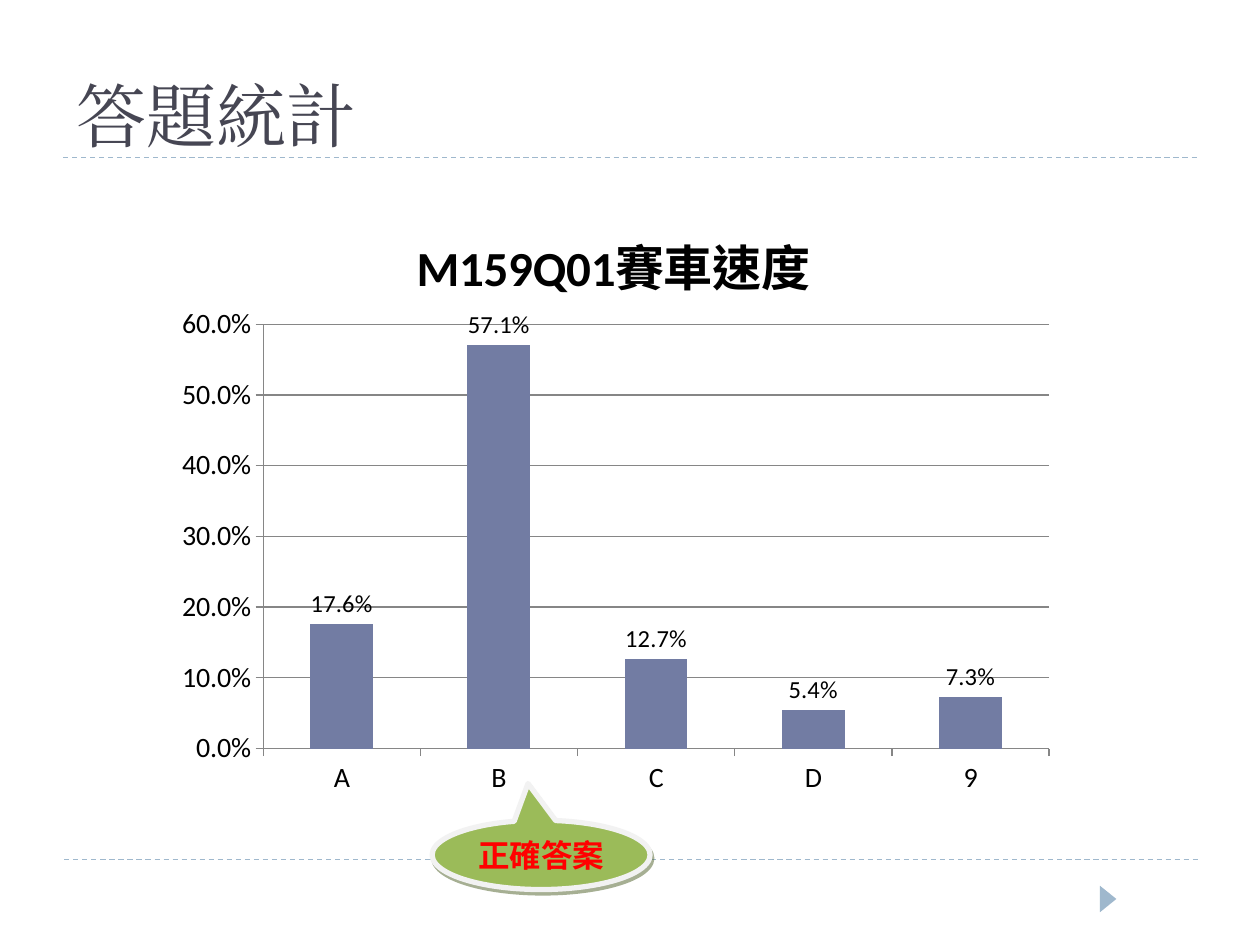
from dataclasses import dataclass

from lxml import etree
from pptx import Presentation
from pptx.chart.data import CategoryChartData
from pptx.dml.color import RGBColor
from pptx.enum.chart import XL_CHART_TYPE, XL_LABEL_POSITION, XL_TICK_MARK
from pptx.enum.dml import MSO_LINE
from pptx.enum.shapes import MSO_CONNECTOR, MSO_SHAPE
from pptx.enum.text import MSO_ANCHOR, PP_ALIGN
from pptx.oxml import parse_xml
from pptx.oxml.ns import nsdecls, qn
from pptx.util import Inches, Pt

COLUMN = XL_CHART_TYPE.COLUMN_CLUSTERED
LABEL_ABOVE = XL_LABEL_POSITION.OUTSIDE_END
TICK_OUT = XL_TICK_MARK.OUTSIDE
DASH = MSO_LINE.DASH
STRAIGHT = MSO_CONNECTOR.STRAIGHT
TRIANGLE = MSO_SHAPE.ISOSCELES_TRIANGLE
CALLOUT = MSO_SHAPE.OVAL_CALLOUT
BOTTOM, MIDDLE = MSO_ANCHOR.BOTTOM, MSO_ANCHOR.MIDDLE
LEFT, CENTER = PP_ALIGN.LEFT, PP_ALIGN.CENTER

COLORS = {
    "rule": "9FB8CD",
    "title": "464653",
    "bar": "727CA3",
    "axis": "868686",
    "text": "000000",
    "callout": "9BBB59",
    "callout_line": "F2F2F2",
    "callout_shadow": "4E6128",
    "answer": "FF0000",
}


@dataclass
class Rule:
    left: float
    top: float
    width: float = 9.0


@dataclass
class TextStyle:
    font: str
    size: int
    color: str
    bold: bool = False


RULES = [Rule(0.51, 6.82), Rule(0.5, 1.25)]
ANSWERS = {"A": 0.176, "B": 0.571, "C": 0.127, "D": 0.054, "9": 0.073}


def rgb(name: str) -> RGBColor:
    return RGBColor.from_string(COLORS[name])


def style_font(font, style: TextStyle) -> None:
    font.name = style.font
    font.size = Pt(style.size)
    font.bold = style.bold
    font.color.rgb = rgb(style.color)


def write(tf, text: str, style: TextStyle, align, anchor) -> None:
    tf.text = text
    tf.vertical_anchor = anchor
    p = tf.paragraphs[0]
    p.alignment = align
    r = p.runs[0]
    style_font(r.font, style)
    etree.SubElement(r.font._element, qn("a:ea")).set("typeface", style.font)


def add_rule(shapes, rule: Rule) -> None:
    x, y = Inches(rule.left), Inches(rule.top)
    line = shapes.add_connector(STRAIGHT, x, y, x + Inches(rule.width), y)
    line.line.color.rgb = rgb("rule")
    line.line.width = Pt(0.75)
    line.line.dash_style = DASH
    etree.SubElement(line._element.spPr, qn("a:effectLst"))


def manual_layout(inner: bool, **values: float):
    target = '<c:layoutTarget val="inner"/>' if inner else ""
    modes = '<c:xMode val="edge"/><c:yMode val="edge"/>'
    places = "".join(f'<c:{key} val="{v}"/>' for key, v in values.items())
    return parse_xml(
        f'<c:layout {nsdecls("c")}><c:manualLayout>{target}{modes}{places}'
        "</c:manualLayout></c:layout>"
    )


def place(parent, layout, before: str) -> None:
    for old in parent.findall(qn("c:layout")):
        parent.remove(old)
    parent.find(qn(before)).addprevious(layout)


def add_answer_chart(shapes) -> None:
    data = CategoryChartData(number_format="0.0%")
    data.categories = list(ANSWERS)
    data.add_series("Series 1", list(ANSWERS.values()))
    chart = shapes.add_chart(
        COLUMN, Inches(1.3), Inches(1.55), Inches(7.17), Inches(4.88), data
    ).chart
    chart.has_legend = False
    style_font(chart.font, TextStyle("Calibri", 10, "text"))

    chart.has_title = True
    tf = chart.chart_title.text_frame
    write(tf, "M159Q01賽車速度", TextStyle("Calibri", 28, "text", True), CENTER, None)
    chart.chart_title.include_in_layout = False
    place(chart.chart_title._element, manual_layout(False, x=0.27, y=0.05), "c:overlay")

    plot = chart.plots[0]
    plot.gap_width = 150
    plot.vary_by_categories = False
    fill = plot.series[0].format.fill
    fill.solid()
    fill.fore_color.rgb = rgb("bar")
    plot.has_data_labels = True
    labels = plot.data_labels
    labels.show_value = True
    labels.number_format = "0.0%"
    labels.number_format_is_linked = False
    labels.position = LABEL_ABOVE
    style_font(labels.font, TextStyle("Calibri", 14, "text"))

    for axis in (chart.category_axis, chart.value_axis):
        axis.major_tick_mark = TICK_OUT
        axis.format.line.color.rgb = rgb("axis")
        style_font(axis.tick_labels.font, TextStyle("Calibri", 16, "text"))
    values = chart.value_axis
    values.minimum_scale, values.maximum_scale, values.major_unit = 0, 0.6, 0.1
    values.tick_labels.number_format = "0.0%"
    values.tick_labels.number_format_is_linked = False
    values.has_major_gridlines = True
    values.major_gridlines.format.line.color.rgb = rgb("axis")

    area = chart._chartSpace.chart.plotArea
    place(area, manual_layout(True, x=0.11, y=0.21, w=0.87, h=0.69), "c:barChart")


def add_filled(shapes, kind, left: float, top: float, width: float, height: float, color: str):
    sp = shapes.add_shape(kind, Inches(left), Inches(top), Inches(width), Inches(height))
    sp.shadow.inherit = False
    sp.fill.solid()
    sp.fill.fore_color.rgb = rgb(color)
    sp.line.fill.background()
    return sp


def add_answer_callout(shapes) -> None:
    sp = add_filled(shapes, CALLOUT, 3.43, 6.51, 1.73, 0.55, "callout")
    sp.adjustments[0], sp.adjustments[1] = -0.06, -1.03
    sp.line.color.rgb = rgb("callout_line")
    sp.line.width = Pt(3)
    effects = sp._element.spPr.find(qn("a:effectLst"))
    shadow = etree.SubElement(
        effects, qn("a:outerShdw"), blurRad="0", dist=str(Pt(2.2)),
        dir=str(63 * 60000), algn="ctr", rotWithShape="0",
    )
    color = etree.SubElement(shadow, qn("a:srgbClr"), val=COLORS["callout_shadow"])
    etree.SubElement(color, qn("a:alpha"), val="50000")
    tf = sp.text_frame
    tf.margin_left = tf.margin_right = tf.margin_top = tf.margin_bottom = 0
    tf.word_wrap = False
    write(tf, "正確答案", TextStyle("Noto Sans CJK SC", 18, "answer", True), CENTER, MIDDLE)


def main() -> None:
    prs = Presentation()
    prs.slide_width, prs.slide_height = Inches(10), Inches(7.5)
    shapes = prs.slides.add_slide(prs.slide_layouts[6]).shapes

    for rule in RULES:
        add_rule(shapes, rule)
    add_filled(shapes, TRIANGLE, 8.69, 7.07, 0.21, 0.13, "rule").rotation = 90

    tf = shapes.add_textbox(Inches(0.51), Inches(0.21), Inches(7.32), Inches(1.08)).text_frame
    tf.word_wrap = True
    write(tf, "答題統計", TextStyle("Times New Roman", 40, "title"), LEFT, BOTTOM)

    add_answer_chart(shapes)
    add_answer_callout(shapes)
    prs.save("out.pptx")


if __name__ == "__main__":
    main()
